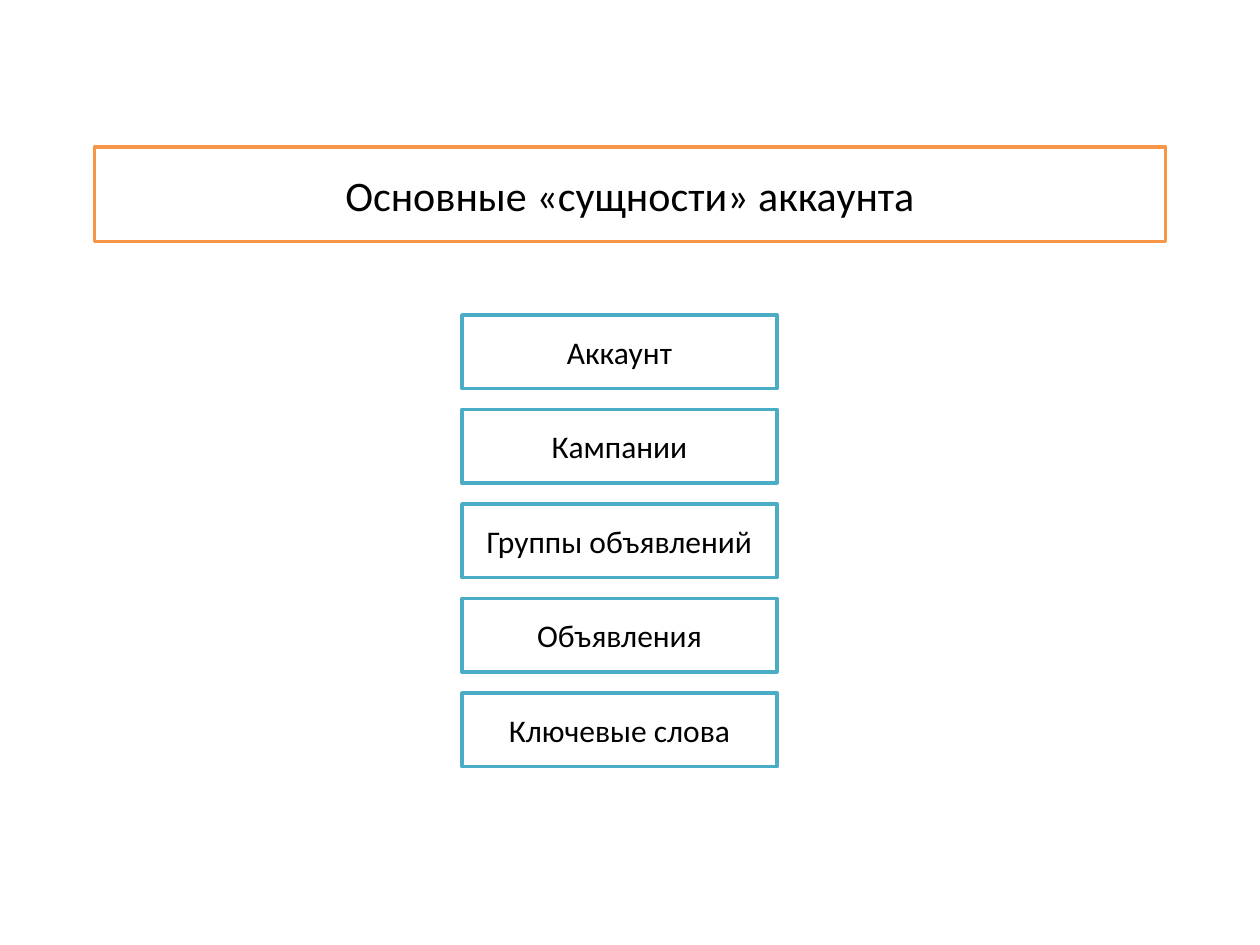
import dataclasses

import pptx
import pptx.dml.color
import pptx.enum.shapes
import pptx.enum.text
import pptx.util

EMU_PER_PX = 7620
ENTITIES = ["Аккаунт", "Кампании", "Группы объявлений", "Объявления", "Ключевые слова"]


@dataclasses.dataclass(frozen=True)
class Theme:
    """Hold the colours, font and type sizes of the slide."""

    font: str = "Calibri"
    text: str = "000000"
    fill: str = "FFFFFF"
    title_line: str = "F79646"
    entity_line: str = "4BACC6"
    title_size: int = 24
    entity_size: int = 18
    line_width: int = 2


THEME = Theme()


def px(length):
    """Turn a length in px into EMU."""
    return pptx.util.Emu(length * EMU_PER_PX)


def color(value):
    """Turn a hex string into a colour."""
    return pptx.dml.color.RGBColor.from_string(value)


def format_box(shape, text, line_color, size):
    """Give a shape its outline, fill and centred text."""
    shape.fill.solid()
    shape.fill.fore_color.rgb = color(THEME.fill)
    shape.line.color.rgb = color(line_color)
    shape.line.width = pptx.util.Pt(THEME.line_width)
    frame = shape.text_frame
    frame.text = text
    frame.word_wrap = True
    frame.vertical_anchor = pptx.enum.text.MSO_ANCHOR.MIDDLE
    paragraph = frame.paragraphs[0]
    paragraph.alignment = pptx.enum.text.PP_ALIGN.CENTER
    paragraph.font.name = THEME.font
    paragraph.font.size = pptx.util.Pt(size)
    paragraph.font.color.rgb = color(THEME.text)


def set_title(slide, text, left, top, width, height):
    """Place and format the title placeholder."""
    title = slide.shapes.title
    title.left, title.top = px(left), px(top)
    title.width, title.height = px(width), px(height)
    format_box(title, text, THEME.title_line, THEME.title_size)


def add_entity(slide, text, left, top, width, height):
    """Add one outlined entity rectangle."""
    shape = slide.shapes.add_shape(
        pptx.enum.shapes.MSO_SHAPE.RECTANGLE, px(left), px(top), px(width), px(height)
    )
    shape.shadow.inherit = False
    format_box(shape, text, THEME.entity_line, THEME.entity_size)


def main():
    """Build the slide and save it."""
    presentation = pptx.Presentation()
    presentation.slide_width, presentation.slide_height = px(1200), px(900)
    slide = presentation.slides.add_slide(presentation.slide_layouts.get_by_name("Title Only"))
    set_title(slide, "Основные «сущности» аккаунта", 90, 140, 1020, 90)
    for index, entity in enumerate(ENTITIES):
        add_entity(slide, entity, 440, 300 + 90 * index, 300, 70)
    presentation.save("out.pptx")


if __name__ == "__main__":
    main()
